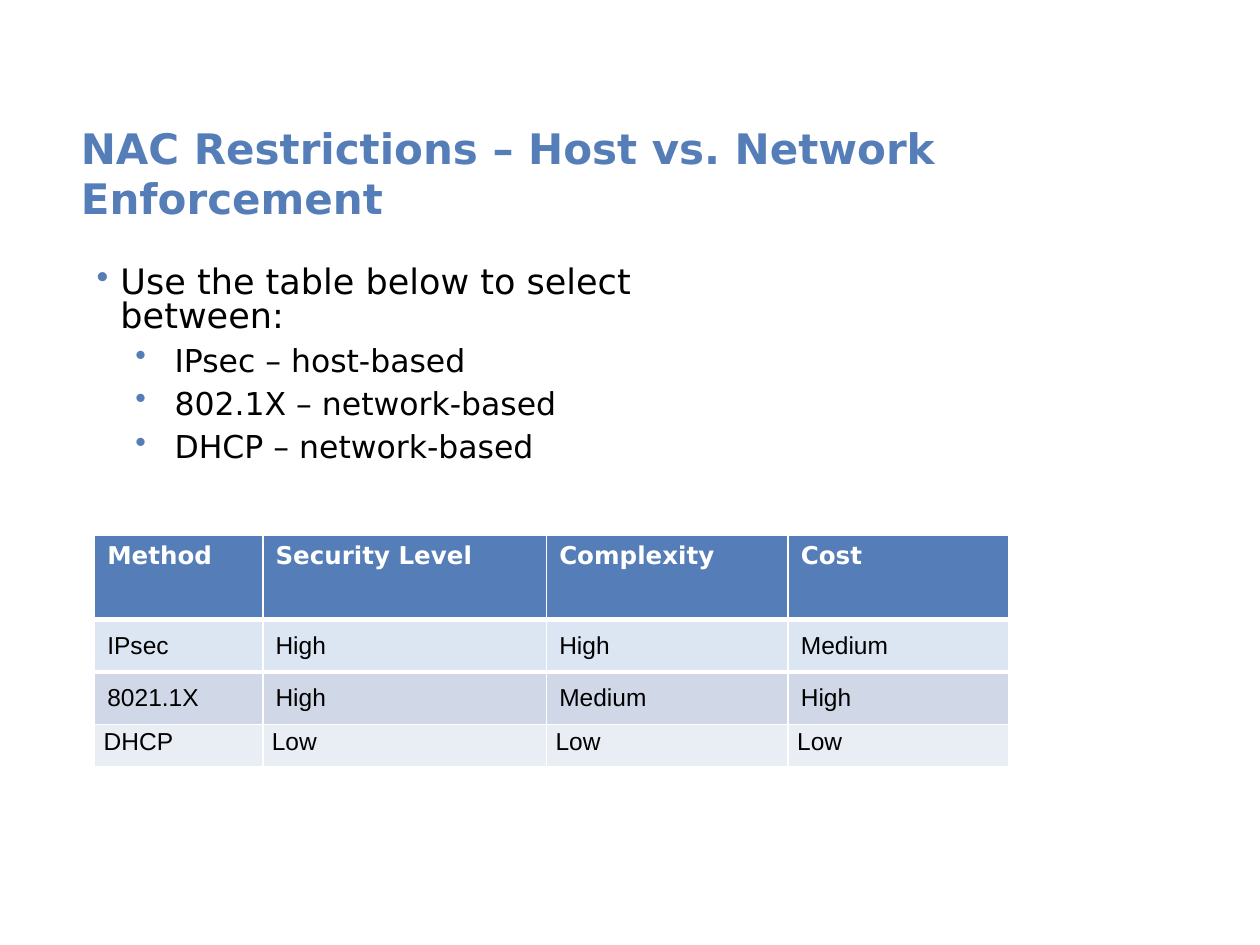
from lxml.etree import SubElement as Sub
from pptx import Presentation
from pptx.dml.color import RGBColor
from pptx.enum.text import MSO_ANCHOR as Anchor, MSO_AUTO_SIZE as Fit, PP_ALIGN as Align
from pptx.oxml.ns import qn
from pptx.util import Cm, Pt

BLUE, WHITE, BLACK = "557EB9", "FFFFFF", "000000"
SANS = "DejaVu Sans"
TITLE = "NAC Restrictions – Host vs. Network Enforcement"
INTRO = "Use the table below to select between:"
METHODS = ["IPsec – host-based", "802.1X – network-based", "DHCP – network-based"]
ROWS = [
    ["Method", "Security Level", "Complexity", "Cost"],
    ["IPsec", "High", "High", "Medium"],
    ["8021.1X", "High", "Medium", "High"],
    ["DHCP", "Low", "Low", "Low"],
]
WIDTHS = [3.39, 5.72, 4.87, 4.44]
HEIGHTS = [1.69, 1.06, 1.06, 0.85]
FILLS = [BLUE, "DCE6F2", "D0D8E8", "E9EDF4"]
RULES = [1, 3, 3, 1, 1]  # points, from the top edge of the table to the bottom


def color(code):
    return RGBColor.from_string(code)


def style(para, size, code, face=SANS, bold=False):
    for run in para.runs:
        font = run.font
        font.size, font.name, font.bold = Pt(size), face, bold
        font.color.rgb = color(code)


def bullet(para, left, hang):
    props = para._p.get_or_add_pPr()
    props.set("marL", str(Cm(left)))
    props.set("indent", str(-Cm(hang)))
    tint = Sub(props, qn("a:buClr"))
    Sub(tint, qn("a:srgbClr"), val=BLUE)
    Sub(props, qn("a:buChar"), char="•")


def border(cell, top, bottom):
    """Draw white edges; top and bottom are widths in points."""
    props = cell._tc.get_or_add_tcPr()
    for side, width in zip("LRTB", (1, 1, top, bottom)):
        line = Sub(props, qn(f"a:ln{side}"), w=str(Pt(width)))
        fill = Sub(line, qn("a:solidFill"))
        Sub(fill, qn("a:srgbClr"), val=WHITE)


def add_title(slide):
    title = slide.shapes.title
    title.left, title.top = Cm(1.5), Cm(2.34)
    title.width, title.height = Cm(23.5), Cm(2.31)
    frame = title.text_frame
    frame.text = TITLE
    frame.word_wrap, frame.auto_size = True, Fit.NONE
    frame.vertical_anchor = Anchor.TOP
    frame.margin_left = frame.margin_right = Cm(0.13)
    frame.margin_top = frame.margin_bottom = Cm(0.13)
    para = frame.paragraphs[0]
    para.alignment = Align.LEFT
    style(para, 24, BLUE, bold=True)


def add_list(slide):
    box = slide.shapes.add_textbox(Cm(1.7), Cm(5.28), Cm(12.7), Cm(4.24))
    frame = box.text_frame
    frame.word_wrap = True
    frame.text = INTRO
    intro = frame.paragraphs[0]
    bullet(intro, 0.48, 0.48)
    intro.line_spacing = 0.8
    style(intro, 20, BLACK)
    for text in METHODS:
        para = frame.add_paragraph()
        para.text, para.level = text, 1
        bullet(para, 1.57, 0.79)
        para.space_before = Pt(3)
        style(para, 18, BLACK)


def fill_cell(cell, text, row):
    head, last = row == 0, row == len(ROWS) - 1
    border(cell, RULES[row], RULES[row + 1])
    cell.fill.solid()
    cell.fill.fore_color.rgb = color(FILLS[row])
    cell.text = text
    cell.vertical_anchor = Anchor.TOP if head else Anchor.MIDDLE
    para = cell.text_frame.paragraphs[0]
    if head:
        style(para, 14, WHITE, bold=True)
    else:
        style(para, 14, BLACK, "Arial")
    if last:
        cell.margin_left = cell.margin_right = Cm(0.18)
        cell.margin_top = cell.margin_bottom = 0
        para.line_spacing = Pt(11)
        para.space_after = Pt(3)
        para.space_before = Pt(3)


def add_grid(slide):
    frame = slide.shapes.add_table(len(ROWS), len(WIDTHS), Cm(1.91), Cm(10.8),
                                   Cm(sum(WIDTHS)), Cm(sum(HEIGHTS)))
    table = frame.table
    for col, width in zip(table.columns, WIDTHS):
        col.width = Cm(width)
    for row, height in zip(table.rows, HEIGHTS):
        row.height = Cm(height)
    for r, texts in enumerate(ROWS):
        for c, text in enumerate(texts):
            fill_cell(table.cell(r, c), text, r)


def main():
    deck = Presentation()
    deck.slide_width, deck.slide_height = Cm(25.4), Cm(19.05)
    slide = deck.slides.add_slide(deck.slide_layouts[5])
    add_title(slide)
    add_list(slide)
    add_grid(slide)
    deck.save("out.pptx")


if __name__ == "__main__":
    main()
